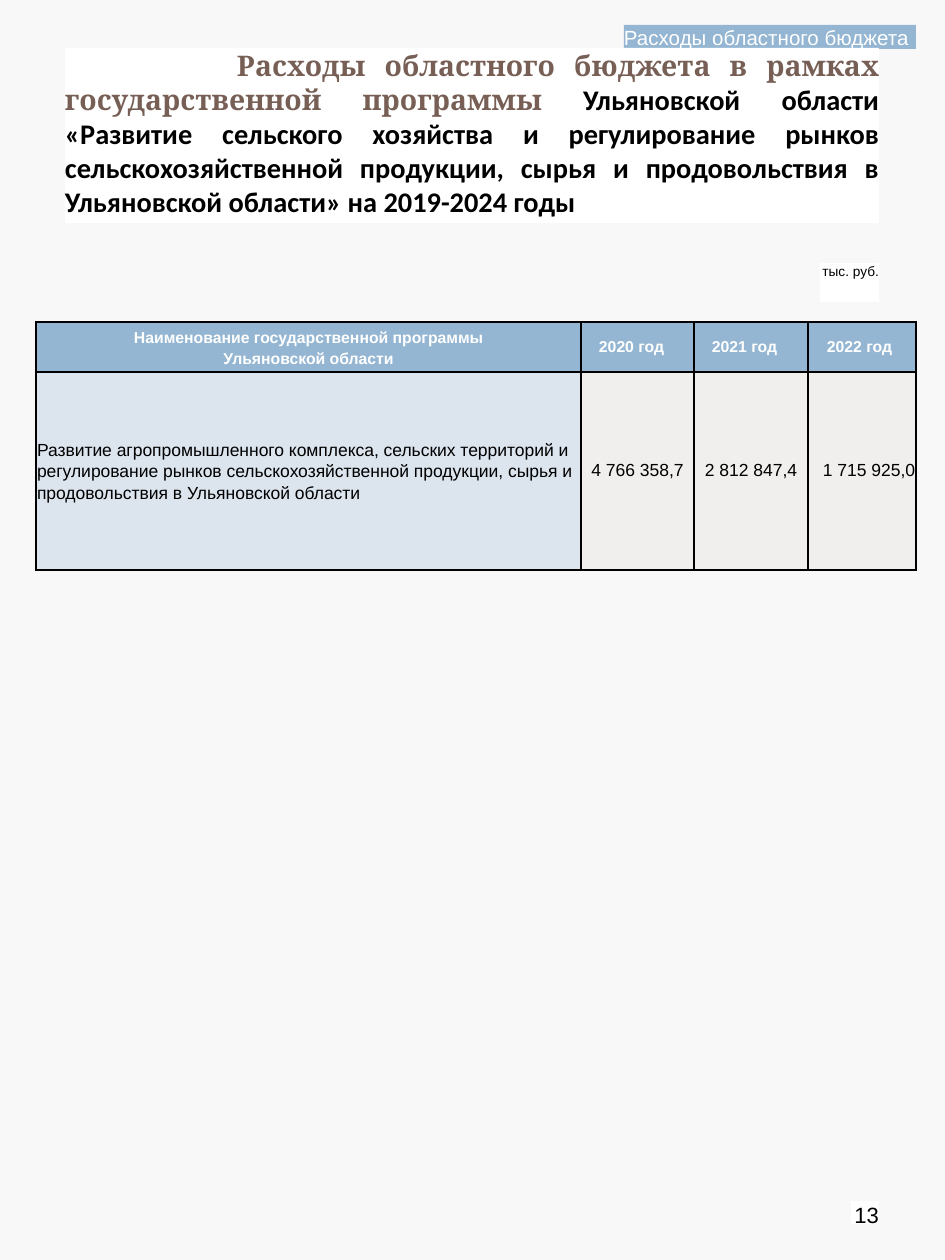
from lxml import etree
from pptx import Presentation
from pptx.dml.color import RGBColor
from pptx.enum.shapes import MSO_SHAPE
from pptx.enum.text import MSO_ANCHOR, PP_ALIGN
from pptx.oxml.ns import qn
from pptx.util import Pt

RECT = MSO_SHAPE.RECTANGLE
TOP, MIDDLE = MSO_ANCHOR.TOP, MSO_ANCHOR.MIDDLE
LEFT, CENTER, RIGHT, JUSTIFY = (
    PP_ALIGN.LEFT, PP_ALIGN.CENTER, PP_ALIGN.RIGHT, PP_ALIGN.JUSTIFY)

EMU_PER_PX = 914400 / 126
BLUE, PALE_BLUE, PALE_GREY = "94B6D2", "DCE4EE", "F0EFED"
WHITE, BLACK, BROWN = "FFFFFF", "000000", "775F55"


def px(n):
    return round(n * EMU_PER_PX)


def rgb(value):
    return RGBColor.from_string(value)


class Page:
    """Style and drawing methods for one slide."""

    font = "Arial"
    border = Pt(1)

    def __init__(self, prs, background):
        self.slide = prs.slides.add_slide(prs.slide_layouts[6])
        fill = self.slide.background.fill
        fill.solid()
        fill.fore_color.rgb = rgb(background)

    def style(self, p, size, color, align=LEFT, bold=False, indent=0):
        p.alignment = align
        p.font.size = Pt(size)
        p.font.bold = bold
        p.font.name = self.font
        p.font.color.rgb = rgb(color)
        if indent:
            pPr = p._p.get_or_add_pPr()
            pPr.set("marL", "0")
            pPr.set("indent", str(px(indent)))

    def box(self, x, y, w, h, fill):
        """Add a filled rectangle and return its first paragraph."""
        sp = self.slide.shapes.add_shape(RECT, px(x), px(y), px(w), px(h))
        sp.shadow.inherit = False
        sp.fill.solid()
        sp.fill.fore_color.rgb = rgb(fill)
        sp.line.fill.background()
        tf = sp.text_frame
        tf.word_wrap = True
        tf.vertical_anchor = TOP
        tf.margin_left = tf.margin_top = tf.margin_right = tf.margin_bottom = 0
        return tf.paragraphs[0]

    def label(self, x, y, w, h, text, size, fill=WHITE, color=BLACK, align=RIGHT):
        p = self.box(x, y, w, h, fill)
        p.text = text
        self.style(p, size, color, align)

    def title(self, x, y, w, h, runs, size, indent):
        p = self.box(x, y, w, h, WHITE)
        self.style(p, size, BLACK, JUSTIFY, True, indent)
        for text, font, color in runs:
            r = p.add_run()
            r.text = text
            r.font.name = font
            r.font.color.rgb = rgb(color)

    def table(self, x, y, widths, heights):
        frame = self.slide.shapes.add_table(
            len(heights), len(widths), px(x), px(y), px(sum(widths)), px(sum(heights)))
        table = frame.table
        for column, w in zip(table.columns, widths):
            column.width = px(w)
        for row, h in zip(table.rows, heights):
            row.height = px(h)
        return table

    def cell(self, cell, text, fill, size, color, align=LEFT, bold=False,
             indent=0, spacing=None, margin=0):
        cell.margin_left = cell.margin_right = px(margin)
        cell.margin_top = cell.margin_bottom = 0
        cell.vertical_anchor = MIDDLE
        p = cell.text_frame.paragraphs[0]
        p.text = text
        self.style(p, size, color, align, bold, indent)
        if spacing:
            p.line_spacing = spacing
        tcPr = cell._tc.get_or_add_tcPr()
        for side in ("a:lnL", "a:lnR", "a:lnT", "a:lnB"):
            ln = etree.SubElement(tcPr, qn(side), w=str(self.border))
            solid = etree.SubElement(ln, qn("a:solidFill"))
            etree.SubElement(solid, qn("a:srgbClr"), val=BLACK)
        cell.fill.solid()
        cell.fill.fore_color.rgb = rgb(fill)


def main():
    prs = Presentation()
    prs.slide_width, prs.slide_height = px(945), px(1260)
    page = Page(prs, "F8F8F8")

    # Section banner and title
    page.label(624, 25, 292, 24, "Расходы областного бюджета", 11.7,
               BLUE, WHITE, LEFT)
    page.title(65, 48, 814, 175, [
        ("Расходы областного бюджета в рамках государственной программы ",
         "Cambria", BROWN),
        ("Ульяновской области «Развитие сельского хозяйства и регулирование "
         "рынков сельскохозяйственной продукции, сырья и продовольствия в "
         "Ульяновской области» на 2019-2024 годы", "Calibri", BLACK),
    ], 16.2, indent=172)

    # Unit of measure
    page.label(820, 263, 59, 39, "тыс. руб.", 7.8)

    # Budget table
    table = page.table(36, 322, [545, 113, 114, 108], [50, 198])
    page.cell(table.cell(0, 0),
              "Наименование государственной программы\nУльяновской области",
              BLUE, 9, WHITE, CENTER, True, spacing=1.21)
    page.cell(table.cell(1, 0),
              "Развитие агропромышленного комплекса, сельских территорий и "
              "регулирование рынков сельскохозяйственной продукции, сырья и "
              "продовольствия в Ульяновской области",
              PALE_BLUE, 10, BLACK, spacing=1.1, margin=1)
    years = [
        ("2020 год", 18, "4 766 358,7", CENTER),
        ("2021 год", 18, "2 812 847,4", CENTER),
        ("2022 год", 19, "1 715 925,0", RIGHT),
    ]
    for col, (year, indent, amount, align) in enumerate(years, 1):
        page.cell(table.cell(0, col), year, BLUE, 9, WHITE,
                  bold=True, indent=indent)
        page.cell(table.cell(1, col), amount, PALE_GREY, 10, BLACK,
                  align, margin=1)

    # Page number
    page.label(851, 1201, 28, 23, "13", 12.6)

    prs.save("out.pptx")


if __name__ == "__main__":
    main()
